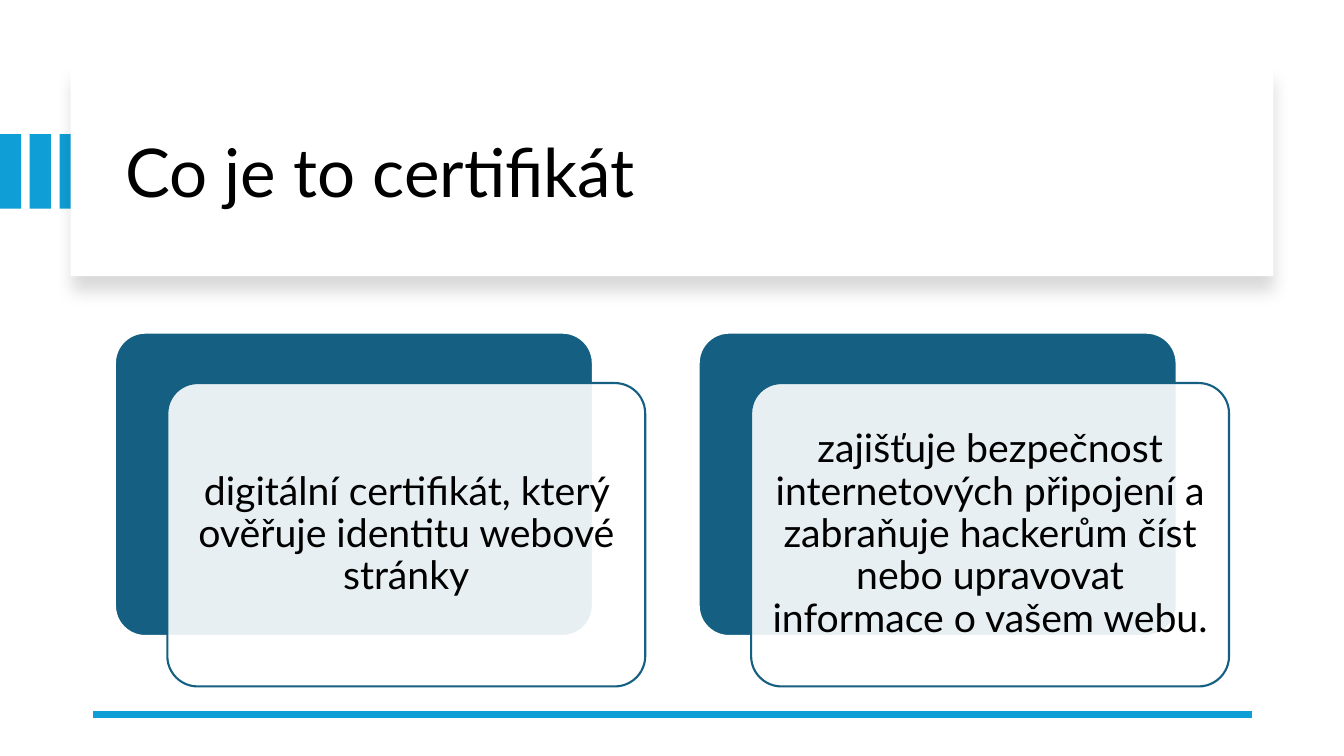
from lxml import etree
from pptx import Presentation
from pptx import util as u
from pptx.dml.color import RGBColor
from pptx.enum import shapes, text
from pptx.oxml import ns

COLORS = {"accent": "0F9ED5", "panel": "156082", "paper": "FFFFFF", "ink": "000000"}
CARDS = [
    "digitální certifikát, který ověřuje identitu webové stránky",
    "zajišťuje bezpečnost internetových připojení a zabraňuje hackerům číst "
    "nebo upravovat informace o vašem webu.",
]


class Deck:
    """Holds the style and the current slide, and draws each kind of element."""

    font = "Lato"

    def __init__(self, prs):
        self.slide = prs.slides.add_slide(prs.slide_layouts[5])

    def color(self, name):
        return RGBColor.from_string(COLORS[name])

    def sub(self, parent, tag, **attrs):
        return etree.SubElement(parent, ns.qn(tag), {k: str(v) for k, v in attrs.items()})

    def shape(self, kind, box, fill, line=None, alpha=None):
        sp = self.slide.shapes.add_shape(kind, *map(u.Inches, box))
        sp.shadow.inherit = False
        sp.fill.solid()
        sp.fill.fore_color.rgb = self.color(fill)
        if alpha:
            clr = sp._element.spPr.find(".//" + ns.qn("a:srgbClr"))
            self.sub(clr, "a:alpha", val=alpha * 1000)
        if line:
            sp.line.color.rgb = self.color(line)
            sp.line.width = u.Pt(1.5)
        else:
            sp.line.fill.background()
        return sp

    def rect(self, box, fill):
        return self.shape(shapes.MSO_SHAPE.RECTANGLE, box, fill)

    def rounded(self, box, fill, line, alpha=None):
        sp = self.shape(shapes.MSO_SHAPE.ROUNDED_RECTANGLE, box, fill, line, alpha)
        sp.adjustments[0] = 0.1

    def banner(self, box):
        sp = self.rect(box, "paper")
        effects = sp._element.spPr.find(ns.qn("a:effectLst"))
        shadow = self.sub(effects, "a:outerShdw", blurRad=u.Pt(11), dist=u.Pt(10),
                          dir=90 * 60000, algn="t", rotWithShape=0)
        clr = self.sub(shadow, "a:srgbClr", val=COLORS["ink"])
        self.sub(clr, "a:alpha", val=15000)

    def set_text(self, sp, words, size, align, inset=None):
        tf = sp.text_frame
        frame = {"word_wrap": True, "auto_size": text.MSO_AUTO_SIZE.NONE,
                 "vertical_anchor": text.MSO_ANCHOR.MIDDLE}
        if inset:
            for side in ("left", "top", "right", "bottom"):
                frame["margin_" + side] = u.Inches(inset)
        p = tf.paragraphs[0]
        r = p.add_run()
        r.text = words
        r.font.color.rgb = self.color("ink")
        for target, values in (
            (tf, frame),
            (p, {"alignment": align, "line_spacing": 0.9}),
            (r.font, {"name": self.font, "size": u.Pt(size)}),
        ):
            for name, value in values.items():
                setattr(target, name, value)

    def title(self, words, box):
        sp = self.slide.shapes.title
        for name, value in zip(("left", "top", "width", "height"), box):
            setattr(sp, name, u.Inches(value))
        self.slide.shapes._spTree.append(sp._element)
        self.set_text(sp, words, 48, text.PP_ALIGN.LEFT)

    def rule(self, start, end, width):
        line = self.slide.shapes.add_connector(
            shapes.MSO_CONNECTOR.STRAIGHT, *map(u.Inches, start + end))
        line.line.color.rgb = self.color("accent")
        line.line.width = u.Pt(width)
        self.sub(line._element.spPr, "a:effectLst")

    def card(self, left, top, words):
        width, height = 4.74, 3.01
        self.rounded((left, top, width, height), "panel", "paper")
        left, top = left + 0.52, top + 0.5
        self.rounded((left, top, width, height), "paper", "panel", alpha=90)
        pad = 0.09
        box = (left + pad, top + pad, width - 2 * pad, height - 2 * pad)
        tb = self.slide.shapes.add_textbox(*map(u.Inches, box))
        self.set_text(tb, words, 28, text.PP_ALIGN.CENTER, inset=0.11)


def main():
    prs = Presentation()
    prs.slide_width, prs.slide_height = u.Inches(13.33), u.Inches(7.5)
    deck = Deck(prs)
    for i in range(3):
        deck.rect((i * 0.295, 1.33, 0.21, 0.74), "accent")
    deck.banner((0.7, 0.67, 11.93, 2.07))
    deck.title("Co je to certifikát", (1.14, 0.89, 11.13, 1.7))
    deck.rule((12.42, 7.09), (0.92, 7.09), 4.5)
    for i, words in enumerate(CARDS):
        deck.card(1.14 + i * 5.79, 3.3, words)
    prs.save("out.pptx")


if __name__ == "__main__":
    main()
